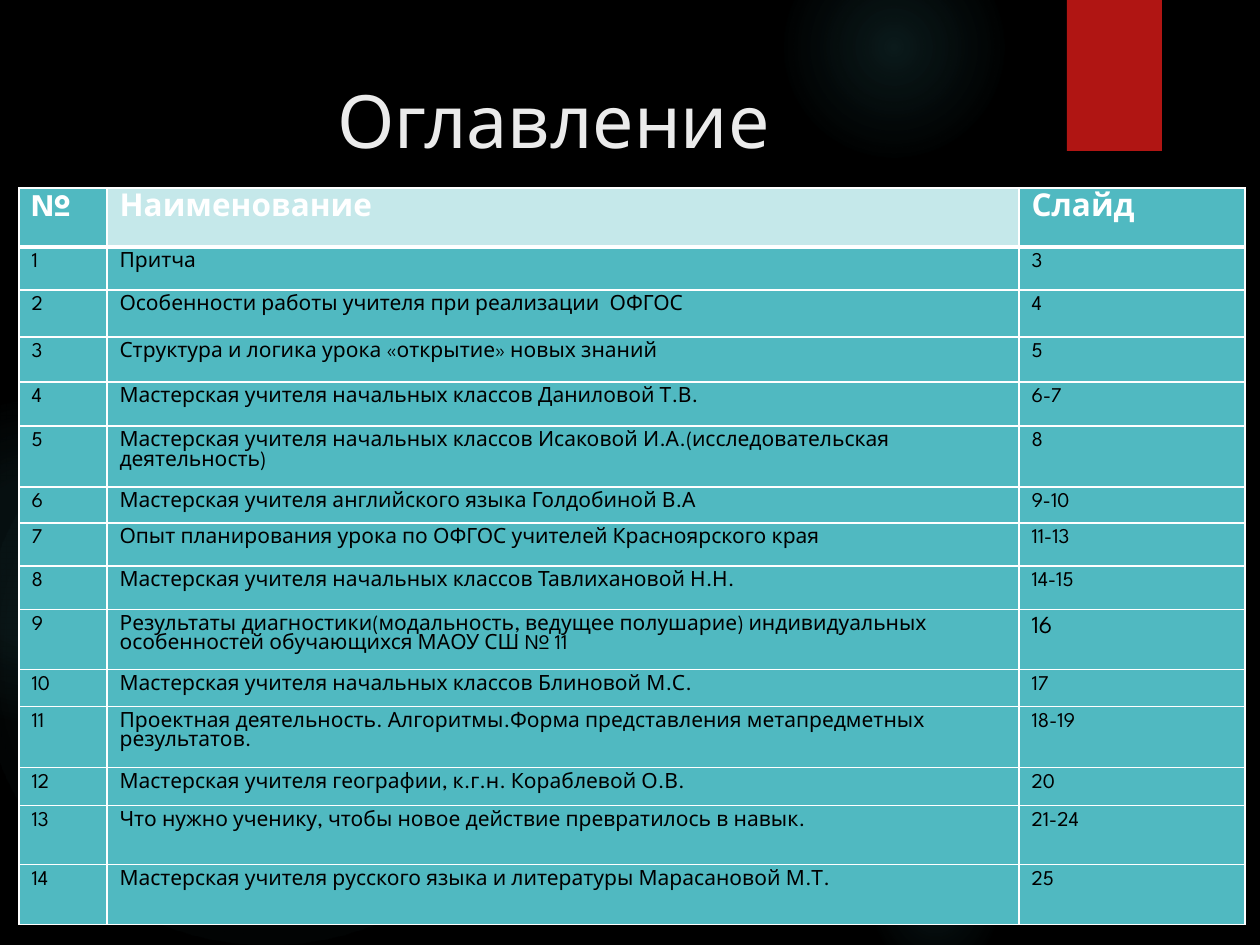
from lxml.etree import SubElement
from pptx import Presentation
from pptx.dml.color import RGBColor
from pptx.enum.shapes import MSO_SHAPE
from pptx.enum.text import MSO_ANCHOR, PP_ALIGN
from pptx.oxml.ns import qn
from pptx.util import Pt

PX = 914400 // 126
FONT = "League Spartan"
BLACK = RGBColor(0x00, 0x00, 0x00)
WHITE = RGBColor(0xFF, 0xFF, 0xFF)
OFF_WHITE = RGBColor(0xEB, 0xEB, 0xEB)
RED = RGBColor(0xB0, 0x15, 0x13)
TEAL = RGBColor(0x50, 0xB9, 0xC1)
PALE_TEAL = RGBColor(0xC5, 0xE8, 0xEA)

# Box, then (position, opacity) stops in percent
GLOWS = [
    ((868, 231, 388, 388), ((0, 7), (36, 6), (69, 0))),
    ((784, -63, 220, 220), ((0, 14), (36, 7), (73, 0))),
    ((868, 840, 136, 136), ((0, 9), (36, 5), (66, 0))),
    ((-21, 368, 577, 577), ((0, 11), (36, 10), (75, 0))),
    ((-116, 399, 325, 325), ((0, 8), (36, 8), (72, 0))),
]

HEADER = ("№", "Наименование", "Слайд")
CONTENTS = [
    ("Притча", "3"),
    ("Особенности работы учителя при реализации  ОФГОС", "4"),
    ("Структура и логика урока «открытие» новых знаний", "5"),
    ("Мастерская учителя начальных классов Даниловой Т.В.", "6-7"),
    ("Мастерская учителя начальных классов Исаковой И.А.(исследовательская деятельность)", "8"),
    ("Мастерская учителя английского языка Голдобиной В.А", "9-10"),
    ("Опыт планирования урока по ОФГОС учителей Красноярского края", "11-13"),
    ("Мастерская учителя начальных классов Тавлихановой Н.Н.", "14-15"),
    ("Результаты диагностики(модальность, ведущее полушарие) индивидуальных "
     "особенностей обучающихся МАОУ СШ № 11", "16"),
    ("Мастерская учителя начальных классов Блиновой М.С.", "17"),
    ("Проектная деятельность. Алгоритмы.Форма представления метапредметных результатов.", "18-19"),
    ("Мастерская учителя географии, к.г.н. Кораблевой О.В.", "20"),
    ("Что нужно ученику, чтобы новое действие превратилось в навык.", "21-24"),
    ("Мастерская учителя русского языка и литературы Марасановой М.Т.", "25"),
]
COL_WIDTHS = (88, 912, 226)
ROW_HEIGHTS = (59, 43, 47, 45, 44, 61, 36, 43, 44, 60, 37, 61, 38, 59, 60)


def px(*lengths):
    return [n * PX for n in lengths]


def write(tf, text, size=12, color=BLACK, bold=False, align=PP_ALIGN.LEFT):
    p = tf.paragraphs[0]
    p.alignment = align
    r = p.add_run()
    r.text = text
    r.font.name, r.font.size, r.font.bold = FONT, Pt(size), bold
    r.font.color.rgb = color


def add_color(parent, color):
    fill = SubElement(parent, qn("a:solidFill"))
    SubElement(fill, qn("a:srgbClr"), val=str(color))


class Deck:
    """Holds the presentation and the slide being drawn."""

    def __init__(self, width, height):
        self.prs = Presentation()
        self.prs.slide_width, self.prs.slide_height = px(width, height)
        self.s = self.prs.slides.add_slide(self.prs.slide_layouts[5])

    def background(self, color):
        fill = self.s.background.fill
        fill.solid()
        fill.fore_color.rgb = color

    def shape(self, kind, box, color):
        sp = self.s.shapes.add_shape(kind, *px(*box))
        sp.shadow.inherit = False
        sp.fill.solid()
        sp.fill.fore_color.rgb = color
        sp.line.fill.background()
        return sp

    def glow(self, box, stops):
        """Draw a circle that fades out from its centre."""
        sp = self.shape(MSO_SHAPE.OVAL, box, TEAL)
        solid = sp._element.spPr.find(qn("a:solidFill"))
        grad = solid.makeelement(qn("a:gradFill"), {"rotWithShape": "1"})
        gs_list = SubElement(grad, qn("a:gsLst"))
        for pos, opacity in stops:
            gs = SubElement(gs_list, qn("a:gs"), pos=str(pos * 1000))
            clr = SubElement(gs, qn("a:srgbClr"), val=str(TEAL))
            SubElement(clr, qn("a:alpha"), val=str(opacity * 1000))
        circle = SubElement(grad, qn("a:path"), path="circle")
        SubElement(circle, qn("a:fillToRect"), {side: "50000" for side in "ltrb"})
        solid.getparent().replace(solid, grad)

    def title(self, text, box):
        sp = self.s.shapes.title
        sp.left, sp.top, sp.width, sp.height = px(*box)
        sp.text_frame.word_wrap = True
        sp.text_frame.vertical_anchor = MSO_ANCHOR.MIDDLE
        write(sp.text_frame, text, 42, OFF_WHITE, align=PP_ALIGN.CENTER)
        self.s.shapes._spTree.append(sp._element)  # in front of the glows

    def cell(self, cell, text, fill, bottom=1, **style):
        tc_pr = cell._tc.get_or_add_tcPr()
        for side, width in zip("LRTB", (1, 1, 1, bottom)):
            ln = SubElement(tc_pr, qn(f"a:ln{side}"), w=str(Pt(width)))
            add_color(ln, WHITE)
        cell.fill.solid()
        cell.fill.fore_color.rgb = fill
        write(cell.text_frame, text, **style)

    def table(self, left, top):
        box = px(left, top, sum(COL_WIDTHS), sum(ROW_HEIGHTS))
        table = self.s.shapes.add_table(len(ROW_HEIGHTS), len(COL_WIDTHS), *box).table
        for col, width in zip(table.columns, px(*COL_WIDTHS)):
            col.width = width
        for row, height in zip(table.rows, px(*ROW_HEIGHTS)):
            row.height = height
        for cell, text, fill in zip(table.rows[0].cells, HEADER, (TEAL, PALE_TEAL, TEAL)):
            self.cell(cell, text, fill, bottom=3, size=18, color=WHITE, bold=True)
        for number, (name, pages) in enumerate(CONTENTS, 1):
            for cell, text in zip(table.rows[number].cells, (str(number), name, pages)):
                self.cell(cell, text, TEAL, size=14 if text == "16" else 12)


def main():
    deck = Deck(1260, 945)
    deck.background(BLACK)
    for box, stops in GLOWS:
        deck.glow(box, stops)
    deck.shape(MSO_SHAPE.RECTANGLE, (1067, 0, 95, 151), RED)
    deck.title("Оглавление", (67, 63, 973, 112))
    deck.table(19, 188)
    deck.prs.save("out.pptx")


if __name__ == "__main__":
    main()
